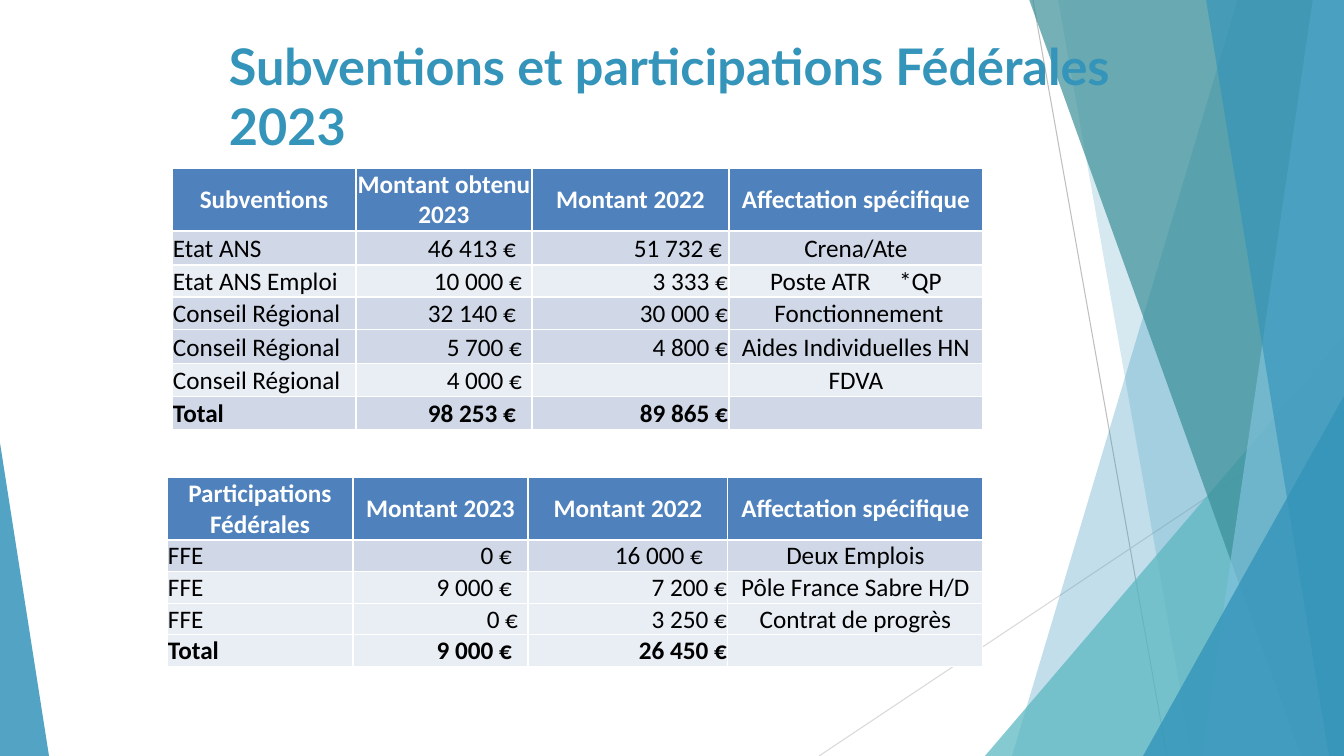
from lxml import etree
from pptx import Presentation
from pptx import util as u
from pptx.dml.color import RGBColor
from pptx.enum import shapes, text
from pptx.oxml.ns import qn

W, H = 1344, 756
PX = 12192000 / W

BLUE = RGBColor(0x34, 0x94, 0xBA)
TEAL = RGBColor(0x3A, 0x8F, 0x98)
AQUA = RGBColor(0x58, 0xB6, 0xC0)
SKY = RGBColor(0x7F, 0xC1, 0xDB)
GREY = RGBColor(0xBF, 0xBF, 0xBF)
PALE_GREY = RGBColor(0xD9, 0xD9, 0xD9)
HEADER = RGBColor(0x4F, 0x81, 0xBD)
BAND = RGBColor(0xD0, 0xD8, 0xE8)
LIGHT_BAND = RGBColor(0xE9, 0xED, 0xF4)
WHITE = RGBColor(0xFF, 0xFF, 0xFF)
BLACK = RGBColor(0, 0, 0)

LEFT, CENTER, RIGHT = text.PP_ALIGN.LEFT, text.PP_ALIGN.CENTER, text.PP_ALIGN.RIGHT
COLUMN_ALIGN = [LEFT, RIGHT, RIGHT, CENTER]
COLUMN_INSET = [1, 10, 1, 1]
SPACE = 6  # width of one blank at the table's text size

# A cell is a text, or a text with extra px of inset.
GRANTS = [
    ["Subventions", "Montant obtenu 2023", "Montant 2022", "Affectation spécifique"],
    ["Etat ANS", ("46 413 €", SPACE), ("51 732 €", SPACE), "Crena/Ate"],
    ["Etat ANS Emploi", "10 000 €", "3 333 €", "Poste ATR\t*QP"],
    ["Conseil Régional", ("32 140 €", SPACE), "30 000 €", ("Fonctionnement", SPACE)],
    ["Conseil Régional", "5 700 €", "4 800 €", "Aides Individuelles HN"],
    ["Conseil Régional", "4 000 €", "", "FDVA"],
    ["Total", ("98 253 €", SPACE), "89 865 €", ""],
]
SHARES = [
    ["Participations Fédérales", "Montant 2023", "Montant 2022", "Affectation spécifique"],
    ["FFE", ("0 €", SPACE), ("16 000 €", 4 * SPACE), "Deux Emplois"],
    ["FFE", ("9 000 €", SPACE), "7 200 €", "Pôle France Sabre H/D"],
    ["FFE", "0 €", "3 250 €", "Contrat de progrès"],
    ["Total", ("9 000 €", SPACE), "26 450 €", ""],
]


def px(n):
    return u.Emu(round(n * PX))


def paint(sp, color, alpha):
    """Fill with a see-through colour, without line or shadow."""
    sp.shadow.inherit = False
    sp.line.fill.background()
    sp.fill.solid()
    sp.fill.fore_color.rgb = color
    clr = sp.fill._xPr.find(".//" + qn("a:srgbClr"))
    etree.SubElement(clr, qn("a:alpha")).set("val", str(alpha * 1000))


def add_line(s, x1, y1, x2, y2, color):
    line = s.shapes.add_connector(shapes.MSO_CONNECTOR.STRAIGHT, px(x1), px(y1), px(x2), px(y2))
    line.line.color.rgb = color
    line.line.width = u.Pt(0.75)
    etree.SubElement(line._element.spPr, qn("a:effectLst"))


def add_wedge(s, top_x, bottom_x, color, alpha):
    """Full-height panel from a slanted left edge to the slide's right edge."""
    builder = s.shapes.build_freeform(top_x, -1, scale=PX)
    builder.add_line_segments([(W, -1), (W, H), (bottom_x, H)], close=True)
    paint(builder.convert_to_shape(), color, alpha)


def add_corner(s, x, y, w, apex, color, alpha):
    """Triangle standing on the slide's bottom edge."""
    sp = s.shapes.add_shape(shapes.MSO_SHAPE.ISOSCELES_TRIANGLE, px(x), px(y), px(w), px(H - y))
    sp.adjustments[0] = apex
    paint(sp, color, alpha)


def add_backdrop(s):
    add_line(s, 1033, 0, 1167, H, GREY)
    add_line(s, W, 406, 819, H, PALE_GREY)
    add_wedge(s, 1238, 1012, BLUE, 30)
    add_wedge(s, 1058, 1192, BLUE, 20)
    add_corner(s, 985, 336, 359, 1, AQUA, 72)
    add_wedge(s, 1029, 1301, TEAL, 70)
    add_wedge(s, 1313, 1202, SKY, 70)
    add_wedge(s, 1206, 1329, BLUE, 65)
    add_corner(s, 1143, 396, 201, 1, BLUE, 80)
    add_corner(s, 0, 443, 49, 0, BLUE, 85)


def add_run(p, words, size, font, color, bold):
    r = p.add_run()
    r.text = words
    r.font.size = u.Pt(size)
    r.font.name = font
    r.font.bold = bold
    r.font.color.rgb = color
    return r


def add_title(s, x, y, w, h):
    tf = s.shapes.add_textbox(px(x), px(y), px(w), px(h)).text_frame
    tf.word_wrap = True
    tf.vertical_anchor = text.MSO_ANCHOR.TOP
    add_run(tf.paragraphs[0], "Subventions et participations Fédérales 2023", 36, "Lato", BLUE, True)


def set_borders(cell, top, bottom):
    tc_pr = cell._tc.get_or_add_tcPr()
    for side, points in (("L", 1), ("R", 1), ("T", top), ("B", bottom)):
        ln = etree.SubElement(tc_pr, qn("a:ln" + side), w=str(u.Pt(points)))
        fill = etree.SubElement(ln, qn("a:solidFill"))
        etree.SubElement(fill, qn("a:srgbClr"), val=str(WHITE))


def fill_cell(cell, value, align, inset, color, bold):
    words, extra = value if isinstance(value, tuple) else (value, 0)
    cell.vertical_anchor = text.MSO_ANCHOR.MIDDLE
    cell.margin_left = px(1 + (extra if align == CENTER else 0))
    cell.margin_right = px(inset + (extra if align == RIGHT else 0))
    cell.margin_top, cell.margin_bottom = px(1), 0
    p = cell.text_frame.paragraphs[0]
    p.alignment = align
    p.font.size = u.Pt(18)
    for i, part in enumerate(words.split("\t")):
        if i:  # one widened blank sets the parts of a cell apart
            gap = add_run(p, " ", 18, "Calibri", color, bold)
            gap.font._element.set("spc", "1630")
        if part:
            add_run(p, part, 18, "Calibri", color, bold)


def add_amounts(s, x, y, widths, heights, rows, light_rows):
    frame = s.shapes.add_table(len(rows), len(widths), px(x), px(y), px(sum(widths)), px(sum(heights)))
    table = frame.table
    for col, w in zip(table.columns, widths):
        col.width = px(w)
    for i, (values, h) in enumerate(zip(rows, heights)):
        table.rows[i].height = px(h)
        head = i == 0
        bold = head or values[0] == "Total"
        back = HEADER if head else LIGHT_BAND if i in light_rows else BAND
        for j, value in enumerate(values):
            cell = table.cell(i, j)
            set_borders(cell, 1.5 if i == 1 else 1, 1.5 if head else 1)
            cell.fill.solid()
            cell.fill.fore_color.rgb = back
            fill_cell(cell, value, CENTER if head else COLUMN_ALIGN[j],
                      1 if head else COLUMN_INSET[j], WHITE if head else BLACK, bold)


def main():
    prs = Presentation()
    prs.slide_width, prs.slide_height = px(W), px(H)
    s = prs.slides.add_slide(prs.slide_layouts[6])
    add_backdrop(s)
    add_title(s, 219, 30, 907, 110)
    add_amounts(s, 172, 168, [184, 176, 197, 254], [63, 34, 32, 33, 34, 33, 33], GRANTS, {2, 5})
    add_amounts(s, 167, 477, [186, 175, 200, 255], [63, 31, 32, 31, 32], SHARES, {2, 3, 4})
    prs.save("out.pptx")


if __name__ == "__main__":
    main()
